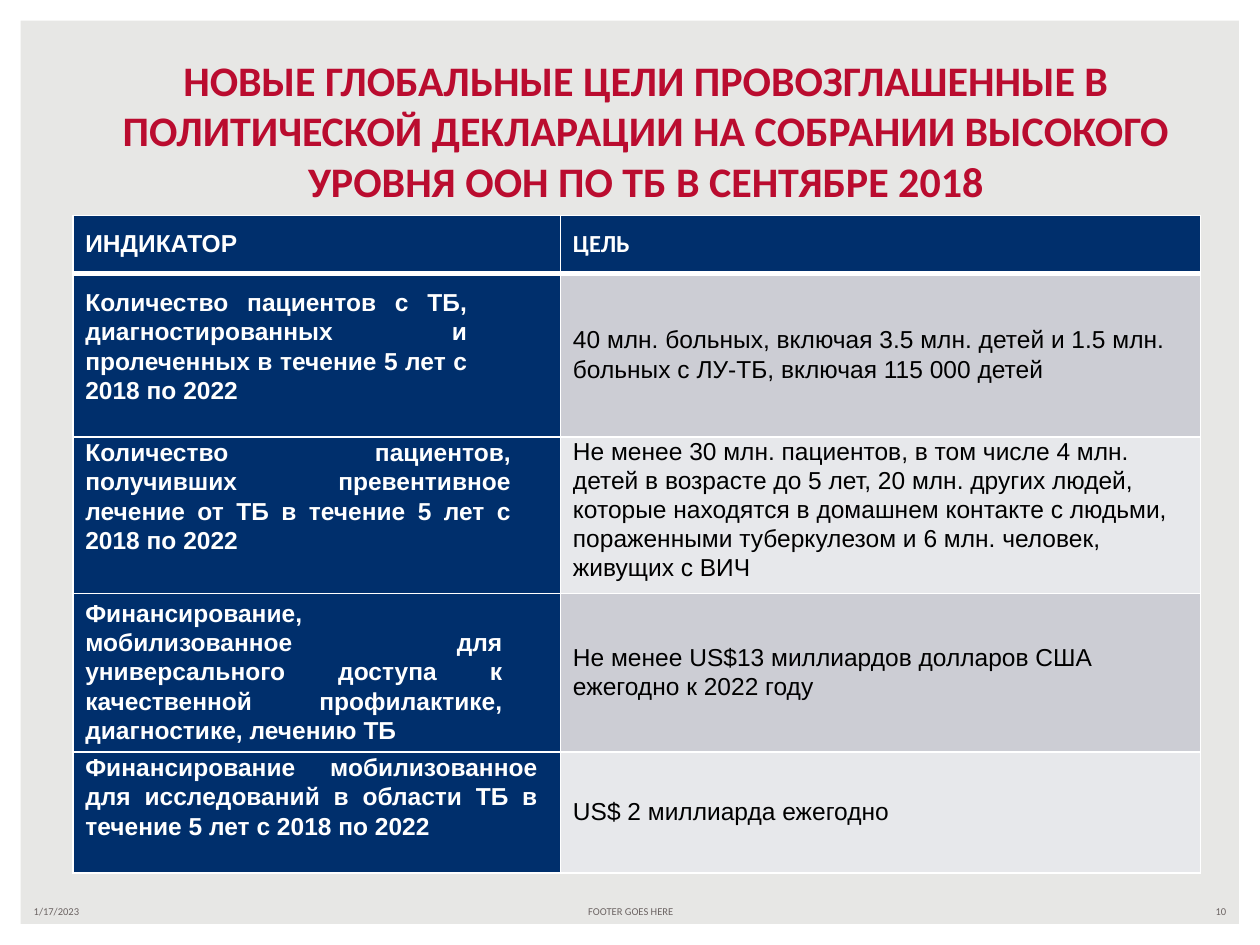
from lxml import etree
from pptx import Presentation, util as u
from pptx.dml import color
from pptx.enum import shapes, text
from pptx.oxml import ns

TITLE = ("НОВЫЕ ГЛОБАЛЬНЫЕ ЦЕЛИ ПРОВОЗГЛАШЕННЫЕ В ПОЛИТИЧЕСКОЙ ДЕКЛАРАЦИИ "
         "НА СОБРАНИИ ВЫСОКОГО УРОВНЯ ООН ПО ТБ В СЕНТЯБРЕ 2018")
HEADERS = [("ИНДИКАТОР", "Arial"), ("ЦЕЛЬ", "Calibri")]
TOP, MIDDLE, BOTTOM = (text.MSO_ANCHOR.TOP, text.MSO_ANCHOR.MIDDLE,
                       text.MSO_ANCHOR.BOTTOM)
TARGETS = [
    {"indicator": "Количество пациентов с ТБ, диагностированных и пролеченных "
                  "в течение 5 лет с 2018 по 2022",
     "goal": "40 млн. больных, включая 3.5 млн. детей и 1.5 млн. больных "
             "с ЛУ-ТБ, включая 115 000 детей",
     "anchors": (BOTTOM, MIDDLE), "right": 1.88, "bottom": 0.65},
    {"indicator": "Количество пациентов, получивших превентивное лечение от ТБ "
                  "в течение 5 лет с 2018 по 2022",
     "goal": "Не менее 30 млн. пациентов, в том числе 4 млн. детей в возрасте "
             "до 5 лет, 20 млн. других людей, которые находятся в домашнем "
             "контакте с людьми, пораженными туберкулезом и 6 млн. человек, "
             "живущих с ВИЧ",
     "anchors": (TOP, TOP), "right": 1.0, "spacing": 1.05},
    {"indicator": "Финансирование, мобилизованное для универсального доступа "
                  "к качественной профилактике, диагностике, лечению ТБ",
     "goal": "Не менее US$13 миллиардов долларов США ежегодно к 2022 году",
     "anchors": (MIDDLE, MIDDLE), "right": 1.17},
    {"indicator": "Финансирование мобилизованное для исследований в области ТБ "
                  "в течение 5 лет с 2018 по 2022",
     "goal": "US$ 2 миллиарда ежегодно",
     "anchors": (TOP, MIDDLE), "right": 0.46},
]
LEFT, CENTER, RIGHT, JUSTIFY = (text.PP_ALIGN.LEFT, text.PP_ALIGN.CENTER,
                                text.PP_ALIGN.RIGHT, text.PP_ALIGN.JUSTIFY)
FOOTERS = [("1/17/2023", 0.43, 5.92, LEFT),
           ("FOOTER GOES HERE", 8.69, 8.05, CENTER),
           ("10", 19.05, 5.92, RIGHT)]
COLUMN_WIDTHS = [9.83, 12.9]
ROW_HEIGHTS = [1.17, 3.3, 3.15, 3.2, 2.44]
NAVY, WHITE, BANDS = "002F6C", "FFFFFF", ["CCCDD4", "E7E8EB"]


def paint(fill, hex_color):
    fill.solid()
    fill.fore_color.rgb = color.RGBColor.from_string(hex_color)


def write(frame, words, size, font, hex_color, bold=False, align=LEFT, spacing=1.0):
    paragraph = frame.paragraphs[0]
    paragraph.alignment = align
    paragraph.line_spacing = spacing
    run = paragraph.add_run()
    run.text = words
    run.font.size = u.Pt(size)
    run.font.name = font
    run.font.bold = bold
    paint(run.font.fill, hex_color)


def add_borders(cell, bottom_width):
    properties = cell._tc.get_or_add_tcPr()
    for index, (side, width) in enumerate(
            [("lnL", 1), ("lnR", 1), ("lnT", 1), ("lnB", bottom_width)]):
        line = etree.Element(ns.qn("a:" + side), w=str(u.Pt(width)))
        solid = etree.SubElement(line, ns.qn("a:solidFill"))
        etree.SubElement(solid, ns.qn("a:srgbClr"), val=WHITE)
        properties.insert(index, line)


def fill_cell(cell, words, font, fill, hex_color, bold=False, align=LEFT,
              anchor=MIDDLE, spacing=1.07, right=0.15, bottom=0.05, border=1):
    paint(cell.fill, fill)
    add_borders(cell, border)
    cell.vertical_anchor = anchor
    cell.margin_left, cell.margin_top = u.Cm(0.25), 0
    cell.margin_right, cell.margin_bottom = u.Cm(right), u.Cm(bottom)
    write(cell.text_frame, words, 14, font, hex_color, bold, align, spacing)


def add_frame(slide, width, height):
    frame = slide.shapes.add_shape(shapes.MSO_SHAPE.FRAME, 0, 0, width, height)
    frame.adjustments[0] = 0.022
    frame.shadow.inherit = False
    frame.line.fill.background()
    paint(frame.fill, WHITE)


def add_title(slide):
    title = slide.shapes.title
    title.left, title.top = u.Cm(1.17), u.Cm(0.94)
    title.width, title.height = u.Cm(23.7), u.Cm(3.33)
    title.text_frame.auto_size = text.MSO_AUTO_SIZE.NONE
    title.text_frame.vertical_anchor = BOTTOM
    write(title.text_frame, TITLE, 24, "Calibri", "BA0C2F", True, CENTER)


def add_targets(slide):
    table = slide.shapes.add_table(
        len(ROW_HEIGHTS), len(COLUMN_WIDTHS), u.Cm(1.47), u.Cm(4.34),
        u.Cm(sum(COLUMN_WIDTHS)), u.Cm(sum(ROW_HEIGHTS))).table
    for column, width in zip(table.columns, COLUMN_WIDTHS):
        column.width = u.Cm(width)
    for row, height in zip(table.rows, ROW_HEIGHTS):
        row.height = u.Cm(height)
    for column, (words, font) in enumerate(HEADERS):
        fill_cell(table.cell(0, column), words, font, NAVY, WHITE, True, border=3)
    for row, target in enumerate(TARGETS, 1):
        indicator_anchor, goal_anchor = target["anchors"]
        fill_cell(table.cell(row, 0), target["indicator"], "Arial", NAVY, WHITE,
                  True, JUSTIFY, indicator_anchor, right=target["right"],
                  bottom=target.get("bottom", 0.05))
        fill_cell(table.cell(row, 1), target["goal"], "Arial",
                  BANDS[(row - 1) % 2], "000000", anchor=goal_anchor,
                  spacing=target.get("spacing", 1.07))


def add_footers(slide):
    for words, left, width, align in FOOTERS:
        box = slide.shapes.add_textbox(u.Cm(left), u.Cm(18.11), u.Cm(width), u.Cm(0.51))
        box.text_frame.word_wrap = True
        box.text_frame.vertical_anchor = MIDDLE
        write(box.text_frame, words, 6, "Calibri", "6C6463", align=align)


def main():
    presentation = Presentation()
    presentation.slide_width, presentation.slide_height = u.Cm(25.4), u.Cm(19.05)
    slide = presentation.slides.add_slide(presentation.slide_layouts[5])
    paint(slide.background.fill, "E7E7E5")
    add_frame(slide, presentation.slide_width, presentation.slide_height)
    add_title(slide)
    add_targets(slide)
    add_footers(slide)
    presentation.save("out.pptx")


if __name__ == "__main__":
    main()
